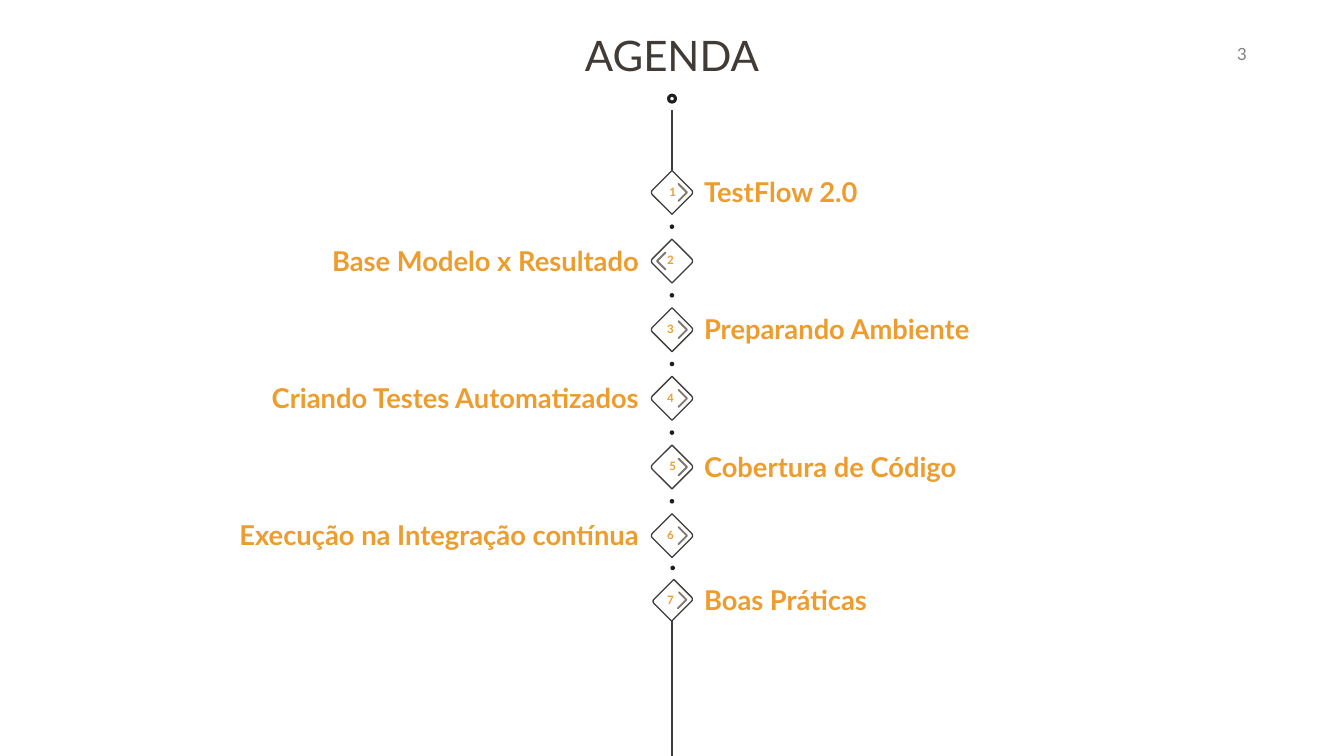
from pptx import Presentation
from pptx.dml.color import RGBColor
from pptx.enum import shapes, text
from pptx.util import Inches, Pt
from lxml import etree

WIDE, HIGH = 17.77, 10
CELL = HIGH / 100  # one grid cell; columns count from the spine
MID = WIDE / 2 / CELL
HUES = {"ink": "403C38", "title": "403B37", "page": "83807D", "dot": "201E1C",
        "arrow": "807870", "gold": "ED9C2E", "paper": "FFFFFF"}
KIND, SIDE = shapes.MSO_SHAPE, text.PP_ALIGN
ITEMS = ["TestFlow 2.0", "Base Modelo x Resultado", "Preparando Ambiente",
         "Criando Testes Automatizados", "Cobertura de Código",
         "Execução na Integração contínua", "Boas Práticas"]

deck = Presentation()
deck.slide_width, deck.slide_height = Inches(WIDE), Inches(HIGH)
page = deck.slides.add_slide(deck.slide_layouts[6])


def draw(kind, col, row, wide, high, fill=None, line=None, thick=0, turn=0, bends=()):
    """Add a shape centred on a column and row."""
    form = page.shapes.add_shape(
        kind, *[Inches(n * CELL) for n in (MID + col - wide / 2, row - high / 2, wide, high)])
    form.shadow.inherit = False
    form.rotation = turn
    for n, bend in enumerate(bends):
        form.adjustments[n] = bend
    if fill:
        form.fill.solid()
        form.fill.fore_color.rgb = RGBColor.from_string(HUES[fill])
    else:
        form.fill.background()
    if line:
        form.line.color.rgb = RGBColor.from_string(HUES[line])
        form.line.width = Pt(thick)
    else:
        form.line.fill.background()


def write(words, col, row, wide, high, size, hue, side, bold=False, wrap=True):
    """Add one line of text, its box starting at a column and centred on a row."""
    box = page.shapes.add_textbox(
        *[Inches(n * CELL) for n in (MID + col, row - high / 2, wide, high)])
    frame = box.text_frame
    frame.word_wrap = wrap
    frame.vertical_anchor = text.MSO_ANCHOR.MIDDLE
    para = frame.paragraphs[0]
    para.alignment = side
    run = para.add_run()
    run.text = words
    run.font.name, run.font.size, run.font.bold = "Lato", Pt(size), bold
    run.font.color.rgb = RGBColor.from_string(HUES[hue])


# Title and page number
write("AGENDA", -71.85, 7.2, 143.7, 5.6, 40, "title", SIDE.CENTER)
write("3", 73.75, 7.05, 4.7, 3.7, 16, "page", SIDE.LEFT, wrap=False)

# Spine: ring on top, one line above and one below the steps
draw(KIND.OVAL, 0, 13.05, 0.9, 0.9, line="dot", thick=3)
for top, end in ((14.6, 22.5), (82.1, 100)):
    spine = page.shapes.add_connector(
        shapes.MSO_CONNECTOR.STRAIGHT,
        *[Inches(n * CELL) for n in (MID, top, MID, end)])
    spine.line.color.rgb = RGBColor.from_string(HUES["ink"])
    spine.line.width = Pt(1.25)
    etree.SubElement(
        spine._element.spPr,
        "{http://schemas.openxmlformats.org/drawingml/2006/main}effectLst")

# Steps: equal rows, with the last one set closer and flatter
rows = [25.45 + 9.08 * n for n in range(len(ITEMS) - 1)] + [79.4]
for n, (item, row) in enumerate(zip(ITEMS, rows)):
    last, back = n == len(ITEMS) - 1, n == 1
    if n:
        draw(KIND.OVAL, 0.1 if last else 0, (rows[n - 1] + row) / 2, 0.6, 0.6, fill="dot")
    draw(KIND.ROUND_2_DIAG_RECTANGLE, 0.1 if last else 0, row, 4.1, 3.7 if last else 4.1,
         "paper", "ink", 1.25, 135 if back else 315, (0.1, 0))
    draw(KIND.CORNER, -0.85 if back else 0.85, row, 1.4 if last else 1.6, 1.6,
         "arrow", "arrow", 1.75, 45 if back else 225, (0, 0))
    write(str(n + 1), -3 if n in (0, 4) else -3.3, row - 0.1, 6.2, 3.7,
          11, "gold", SIDE.CENTER, True)
    left = n % 2
    write(item, -71.55 if left else 3.25, row - 0.1, 68.2, 3.7,
          26, "gold", SIDE.RIGHT if left else SIDE.LEFT, True)

deck.save("out.pptx")
